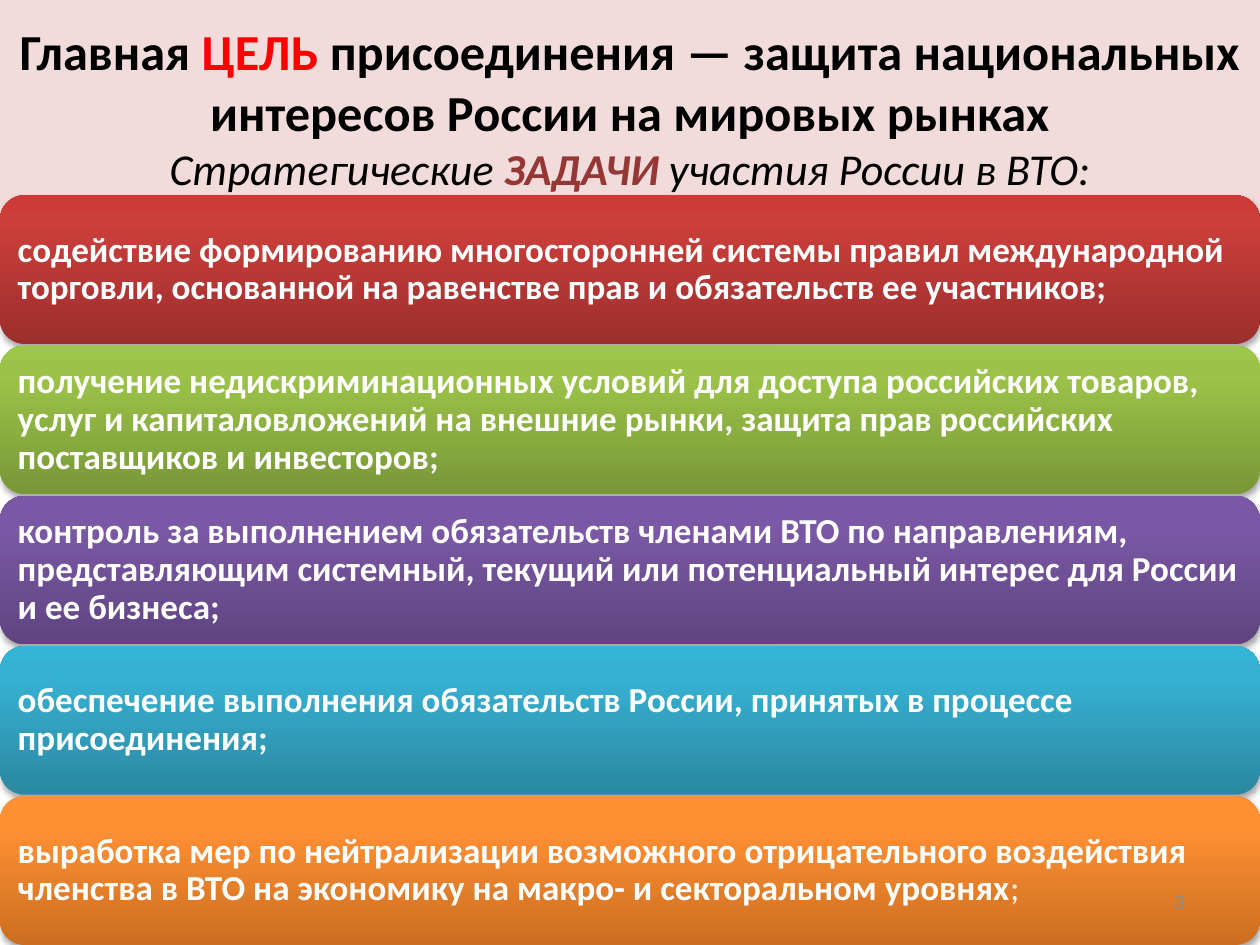
import pptx
import pptx.util
import pptx.dml.color
import pptx.enum.shapes
import pptx.enum.text
import pptx.oxml
import pptx.oxml.ns
from dataclasses import dataclass

Pt = pptx.util.Pt
Shape = pptx.enum.shapes.MSO_SHAPE
Align = pptx.enum.text.PP_ALIGN
Anchor = pptx.enum.text.MSO_ANCHOR
NS = pptx.oxml.ns.nsdecls("a")


@dataclass(frozen=True)
class Theme:
    """Colours and type sizes of the slide."""
    font: str = "Calibri"
    pink: str = "F2DCDB"
    black: str = "000000"
    white: str = "FFFFFF"
    red: str = "FF0000"
    wine: str = "953735"
    grey: str = "8B8B8B"
    head: float = 28.8
    sub: float = 25.2
    body: float = 20
    small: float = 12
    ramps: tuple = (
        ("9C2F2D", "CB3E3A", "CE3B37"),
        ("779737", "9BC348", "9DC746"),
        ("5F4480", "7B58A6", "7C57A8"),
        ("2A88A2", "37B1D2", "34B4D6"),
        ("CC6E20", "FF9034", "FF9136"),
    )


T = Theme()

TASKS = (
    "содействие формированию многосторонней системы правил международной торговли, "
    "основанной на равенстве прав и обязательств ее участников;",
    "получение недискриминационных условий для доступа российских товаров, услуг и "
    "капиталовложений на внешние рынки, защита прав российских поставщиков и инвесторов;",
    "контроль за выполнением обязательств членами ВТО по направлениям, представляющим "
    "системный, текущий или потенциальный интерес для России и ее бизнеса;",
    "обеспечение выполнения обязательств России, принятых в процессе присоединения;",
    "выработка мер по нейтрализации возможного отрицательного воздействия членства "
    "в ВТО на экономику на макро- и секторальном уровнях",
)


def rgb(code):
    """Turn a hex code into a colour."""
    return pptx.dml.color.RGBColor.from_string(code)


def write(para, text, size=T.body, color=T.white, bold=False, italic=False):
    """Add one formatted run to a paragraph."""
    run = para.add_run()
    run.text = text
    font = run.font
    font.name, font.size = T.font, Pt(size)
    font.bold, font.italic = bold, italic
    font.color.rgb = rgb(color)


def setup(shape, align, inset=(7.2, 3.6)):
    """Prepare the text frame of a shape and return its first paragraph."""
    frame = shape.text_frame
    frame.word_wrap = True
    frame.vertical_anchor = Anchor.MIDDLE
    frame.margin_left = frame.margin_right = Pt(inset[0])
    frame.margin_top = frame.margin_bottom = Pt(inset[1])
    para = frame.paragraphs[0]
    para.alignment = align
    return para


def block(slide, kind, box):
    """Add a preset shape without line or shadow."""
    shape = slide.shapes.add_shape(kind, *map(Pt, box))
    shape.shadow.inherit = False
    shape.line.fill.background()
    return shape


def shade(shape, ramp):
    """Give a shape an upward three-stop gradient and a soft shadow."""
    stops = "".join(
        f'<a:gs pos="{pos}"><a:srgbClr val="{code}"/></a:gs>'
        for pos, code in zip((0, 80000, 100000), ramp))
    grad = pptx.oxml.parse_xml(
        f'<a:gradFill {NS} rotWithShape="1"><a:gsLst>{stops}</a:gsLst>'
        '<a:lin ang="16200000" scaled="0"/></a:gradFill>')
    glow = pptx.oxml.parse_xml(
        f'<a:outerShdw {NS} blurRad="{Pt(3.1)}" dist="{Pt(1.8)}" dir="5400000" '
        f'rotWithShape="0"><a:srgbClr val="{T.black}"><a:alpha val="35000"/>'
        '</a:srgbClr></a:outerShdw>')
    shape.fill.background()
    props = shape.element.spPr
    props.replace(props.find(pptx.oxml.ns.qn("a:noFill")), grad)
    props.find(pptx.oxml.ns.qn("a:effectLst")).append(glow)


def title(slide, box):
    """Place the heading with the goal and the lead-in line."""
    shape = block(slide, Shape.RECTANGLE, box)
    shape.fill.solid()
    shape.fill.fore_color.rgb = rgb(T.pink)
    para = setup(shape, Align.CENTER)
    goal = dict(size=T.head, bold=True)
    lead = dict(size=T.sub, italic=True)
    write(para, "Главная ", color=T.black, **goal)
    write(para, "ЦЕЛЬ ", color=T.red, **goal)
    write(para, "присоединения — защита национальных интересов России на мировых рынках",
          color=T.black, **goal)
    para.add_line_break()
    write(para, "Стратегические ", color=T.black, **lead)
    write(para, "ЗАДАЧИ ", color=T.wine, bold=True, **lead)
    write(para, "участия России в ВТО:", color=T.black, **lead)


def cards(slide, box, gap=0.9):
    """Stack the task cards evenly in the box."""
    left, top, width, height = box
    tall = (height - gap * (len(TASKS) - 1)) / len(TASKS)
    for row, (task, ramp) in enumerate(zip(TASKS, T.ramps)):
        spot = (left, top + row * (tall + gap), width, tall)
        card = block(slide, Shape.ROUNDED_RECTANGLE, spot)
        shade(card, ramp)
        para = setup(card, Align.LEFT, (6, 6))
        para.line_spacing = 0.9
        write(para, task, bold=True)
    write(para, ";")


def number(slide, box):
    """Place the page number."""
    para = setup(slide.shapes.add_textbox(*map(Pt, box)), Align.RIGHT)
    write(para, "3", size=T.small, color=T.grey)


def main():
    """Build the slide and save it."""
    deck = pptx.Presentation()
    deck.slide_width, deck.slide_height = Pt(720), Pt(540)
    slide = deck.slides.add_slide(deck.slide_layouts[6])
    title(slide, (0, 0, 720, 122.4))
    cards(slide, (0, 111.6, 720, 428.4))
    number(slide, (516, 500.5, 168, 28.75))
    deck.save("out.pptx")


if __name__ == "__main__":
    main()
